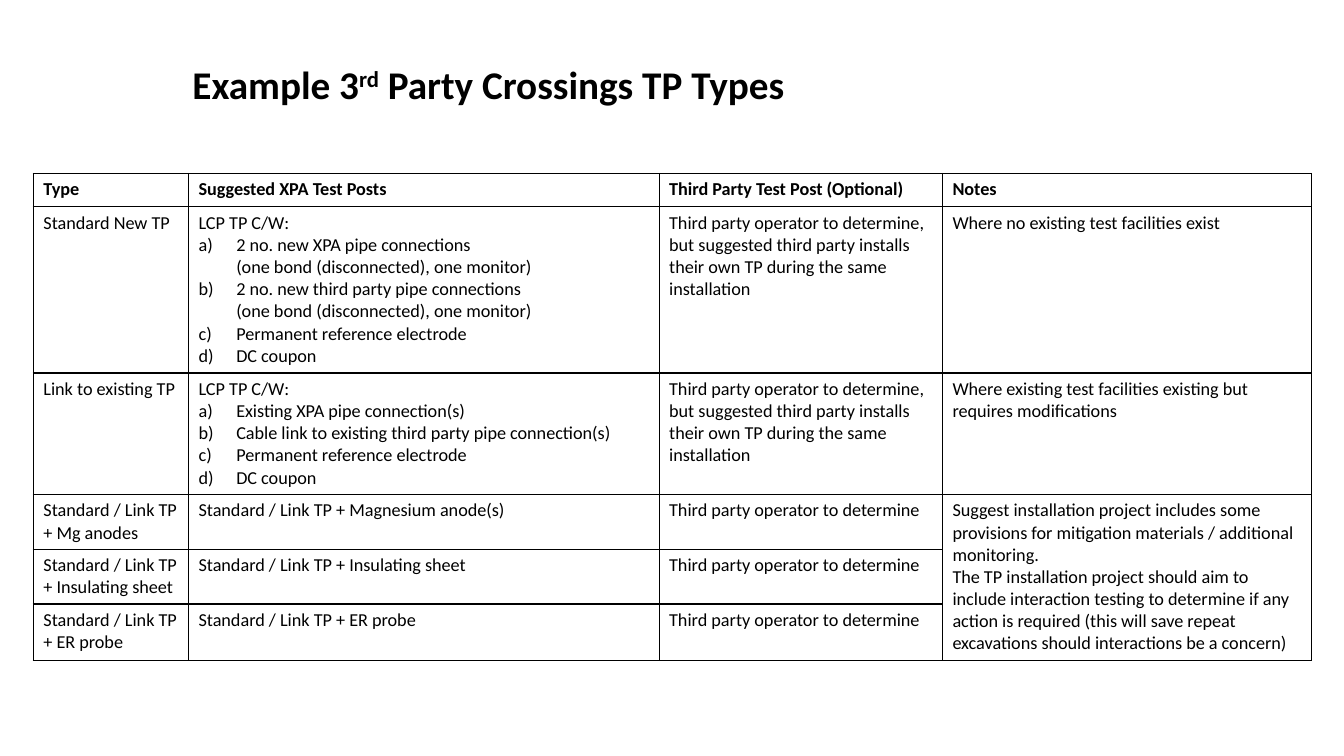
import dataclasses
import typing

import lxml.etree
import pptx
import pptx.dml.color
import pptx.enum.text
import pptx.oxml.ns
import pptx.util

Cm = pptx.util.Cm
Pt = pptx.util.Pt
RGB = pptx.dml.color.RGBColor
qn = pptx.oxml.ns.qn


@dataclasses.dataclass(frozen=True)
class Theme:
    ink: RGB = RGB(0, 0, 0)
    paper: RGB = RGB(255, 255, 255)
    font: str = "Calibri"
    head: int = 28
    body: int = 13


@dataclasses.dataclass(frozen=True)
class Entry:
    """One table row; a line of posts after the first is a lettered item."""
    height: float
    kind: str
    posts: tuple[str, ...]
    third: str
    notes: tuple[str, ...] = ()
    bold: bool = False


THEME = Theme()
WIDTHS = (3.91, 11.86, 7.14, 9.3)
LEAD = "LCP TP C/W:"
BOND = "\v(one bond (disconnected), one monitor)"
ENDING = ("Permanent reference electrode", "DC coupon")
DECIDE = "Third party operator to determine"
INSTALL = DECIDE + ", but suggested third party installs their own TP during the same installation"
LINK = "Standard / Link TP + "
ADVICE = (
    "Suggest installation project includes some provisions for mitigation "
    "materials / additional monitoring.",
    "The TP installation project should aim to include interaction testing to "
    "determine if any action is required (this will save repeat excavations "
    "should interactions be a concern)",
)
ENTRIES = (
    Entry(0.84, "Type", ("Suggested XPA Test Posts",),
          "Third Party Test Post (Optional)", ("Notes",), True),
    Entry(4.19, "Standard New TP",
          (LEAD, "2 no. new XPA pipe connections" + BOND,
           "2 no. new third party pipe connections" + BOND, *ENDING),
          INSTALL, ("Where no existing test facilities exist",)),
    Entry(3.06, "Link to existing TP",
          (LEAD, "Existing XPA pipe connection(s)",
           "Cable link to existing third party pipe connection(s)", *ENDING),
          INSTALL, ("Where existing test facilities existing but requires modifications",)),
    Entry(1.38, LINK + "Mg anodes", (LINK + "Magnesium anode(s)",), DECIDE, ADVICE),
    Entry(1.38, LINK + "Insulating sheet", (LINK + "Insulating sheet",), DECIDE),
    Entry(1.42, LINK + "ER probe", (LINK + "ER probe",), DECIDE),
)


def style(font: typing.Any, size: int, bold: bool) -> None:
    values = {"name": THEME.font, "size": Pt(size), "bold": bold}
    for name, value in values.items():
        setattr(font, name, value)
    font.color.rgb = THEME.ink


def letter(para: typing.Any) -> None:
    """Give the paragraph a hanging a), b), c) label."""
    props = para._p.get_or_add_pPr()
    indent = Cm(0.95)
    for name, value in {"marL": indent, "indent": -indent}.items():
        props.set(name, str(value))
    lxml.etree.SubElement(props, qn("a:buAutoNum"), type="alphaLcParenR")


def frame(cell: typing.Any) -> None:
    """Draw the four borders, then fill the cell."""
    props = cell._tc.get_or_add_tcPr()
    for side in "LRTB":
        line = lxml.etree.SubElement(props, qn("a:ln" + side), w=str(Pt(1)))
        fill = lxml.etree.SubElement(line, qn("a:solidFill"))
        lxml.etree.SubElement(fill, qn("a:srgbClr"), val=str(THEME.ink))
    cell.fill.solid()
    cell.fill.fore_color.rgb = THEME.paper


def write(cell: typing.Any, lines: tuple[str, ...], bold: bool, listed: bool) -> None:
    cell.text = "\n".join(lines)
    for spot, para in enumerate(cell.text_frame.paragraphs):
        if listed and spot:
            letter(para)
        for run in para.runs:
            style(run.font, THEME.body, bold)
        style(para.font, THEME.body, bold)


def add_title(slide: typing.Any) -> None:
    box = slide.shapes.add_textbox(Cm(4.6), Cm(1.52), Cm(21.31), Cm(1.88))
    box.text_frame.word_wrap = True
    box.text_frame.vertical_anchor = pptx.enum.text.MSO_ANCHOR.TOP
    para = box.text_frame.paragraphs[0]
    para.line_spacing = 0.9
    for text, raised in (("Example 3", 0), ("rd", 30000), (" Party Crossings TP Types", 0)):
        run = para.add_run()
        run.text = text
        style(run.font, THEME.head, True)
        if raised:
            run._r.get_or_add_rPr().set("baseline", str(raised))


def add_grid(slide: typing.Any) -> None:
    height = sum(entry.height for entry in ENTRIES)
    table = slide.shapes.add_table(
        len(ENTRIES), len(WIDTHS), Cm(0.84), Cm(4.37), Cm(sum(WIDTHS)), Cm(height)).table
    for name in ("first_row", "horz_banding"):
        setattr(table, name, False)
    for column, width in zip(table.columns, WIDTHS):
        column.width = Cm(width)
    for row, entry in zip(table.rows, ENTRIES):
        row.height = Cm(entry.height)
        texts = ((entry.kind,), entry.posts, (entry.third,), entry.notes)
        for spot, (cell, lines) in enumerate(zip(row.cells, texts)):
            frame(cell)
            write(cell, lines, entry.bold, spot == 1)
    table.cell(3, 3).merge(table.cell(5, 3))


def main() -> None:
    deck = pptx.Presentation()
    deck.slide_width, deck.slide_height = Cm(33.87), Cm(19.05)
    slide = deck.slides.add_slide(deck.slide_layouts[6])
    add_grid(slide)
    add_title(slide)
    deck.save("out.pptx")


if __name__ == "__main__":
    main()
